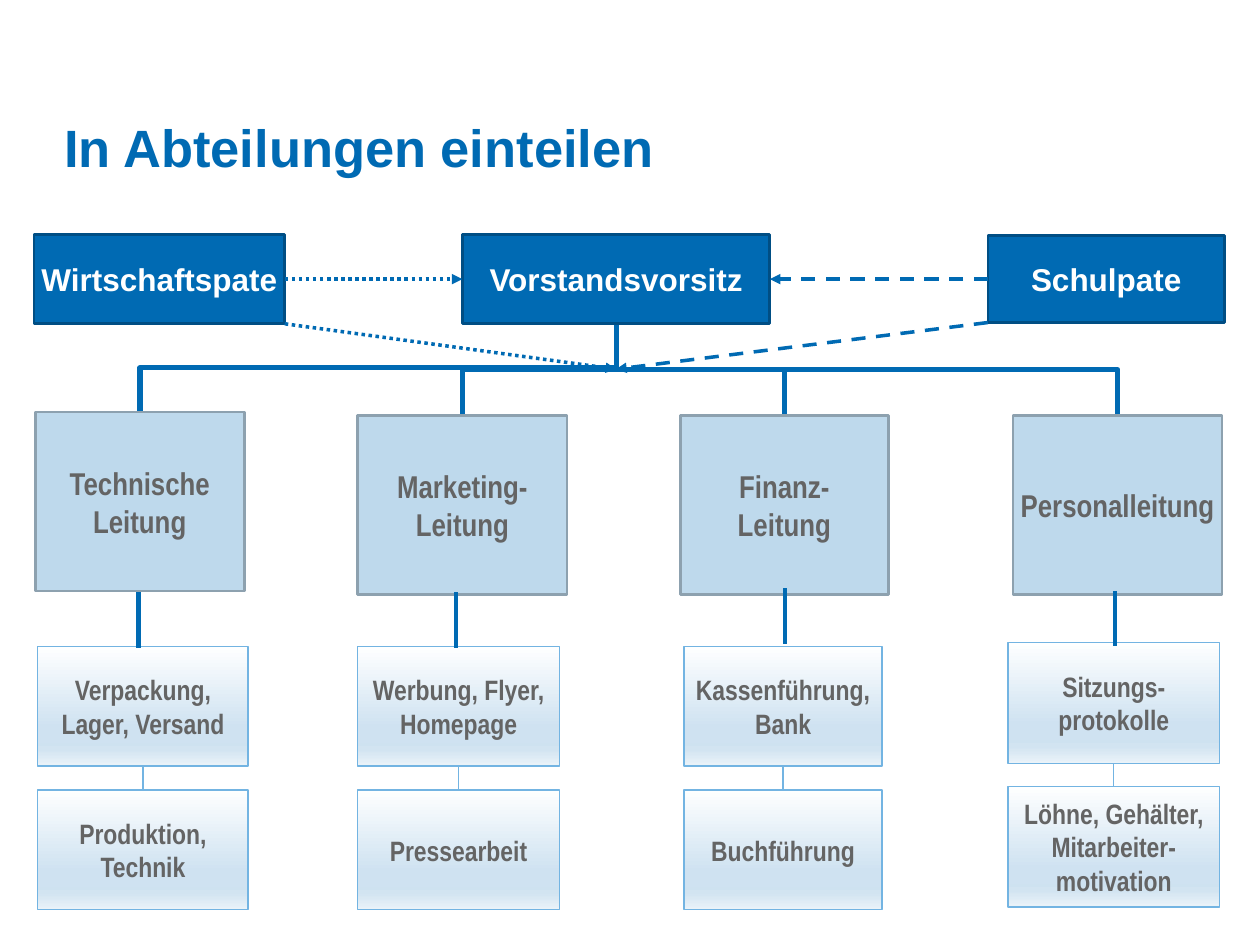
import pptx
import pptx.util
import pptx.dml.color
import pptx.enum.dml
import pptx.enum.shapes
import pptx.enum.text
import pptx.oxml.ns
import lxml.etree

Inches = pptx.util.Inches
Pt = pptx.util.Pt
qn = pptx.oxml.ns.qn
KIND = pptx.enum.shapes.MSO_CONNECTOR
DASH = pptx.enum.dml.MSO_LINE
BLUE, DARK, PALE, SKY, GREY = "006AB3", "004E84", "BED9EC", "73B4E2", "646464"
FADE = [(0, "FEFFFF"), (68, "CFE2F1"), (81, "CEE2F0"), (86, "D2E4F1"), (100, "EBF3F9")]

# Each column: lead box, lead text, link x and top, task boxes, task texts
COLUMNS = [
    ((0.28, 3.27, 1.66, 1.42), "Technische\nLeitung", (1.1, 4.7),
     (0.3, 5.13, 1.67, 0.95), ["Verpackung,\nLager, Versand", "Produktion,\nTechnik"]),
    ((2.84, 3.3, 1.66, 1.42), "Marketing-\nLeitung", (3.62, 4.7),
     (2.84, 5.13, 1.6, 0.95), ["Werbung, Flyer,\nHomepage", "Pressearbeit"]),
    ((5.4, 3.3, 1.65, 1.42), "Finanz-\nLeitung", (6.23, 4.67),
     (5.43, 5.13, 1.57, 0.95), ["Kassenführung,\nBank", "Buchführung"]),
    ((8.04, 3.3, 1.66, 1.42), "Personalleitung", (8.85, 4.69),
     (8, 5.1, 1.68, 0.96), ["Sitzungs-\nprotokolle", "Löhne, Gehälter,\nMitarbeiter-\nmotivation"]),
]
STEP = 1.14  # from one task box to the next


def paint(target, color):
    target.rgb = pptx.dml.color.RGBColor.from_string(color)


def write(shape, text, font, size, color, align):
    frame = shape.text_frame
    frame.text = text
    frame.margin_left = frame.margin_right = 0
    frame.margin_top = frame.margin_bottom = 0
    for para in frame.paragraphs:
        para.alignment = align
        for run in para.runs:
            run.font.name = font
            run.font.size = Pt(size)
            run.font.bold = True
            paint(run.font.color, color)
    return frame


def add_box(slide, box, text, fill, edge, width, font, size, color):
    shape = slide.shapes.add_shape(
        pptx.enum.shapes.MSO_SHAPE.RECTANGLE, *map(Inches, box))
    shape.shadow.inherit = False
    if isinstance(fill, list):
        fade(shape, fill)
    else:
        shape.fill.solid()
        paint(shape.fill.fore_color, fill)
    paint(shape.line.color, edge)
    shape.line.width = Pt(width)
    frame = write(shape, text, font, size, color, pptx.enum.text.PP_ALIGN.CENTER)
    frame.word_wrap = False
    frame.vertical_anchor = pptx.enum.text.MSO_ANCHOR.MIDDLE
    return shape


def fade(shape, stops):
    shape.fill.gradient()
    shape.fill.gradient_angle = 270
    group = shape._element.spPr.find(".//" + qn("a:gsLst"))
    for old in list(group):
        group.remove(old)
    for place, color in stops:
        stop = lxml.etree.SubElement(group, qn("a:gs"), pos=str(place * 1000))
        lxml.etree.SubElement(stop, qn("a:srgbClr"), val=color)


def add_line(slide, start, end, color, width, dash=None, arrow=False, kind=KIND.STRAIGHT):
    line = slide.shapes.add_connector(kind, *map(Inches, start + end))
    paint(line.line.color, color)
    line.line.width = Pt(width)
    if dash:
        line.line.dash_style = dash
    props = line._element.spPr
    if arrow:
        lxml.etree.SubElement(props.find(qn("a:ln")), qn("a:tailEnd"), type="triangle")
    lxml.etree.SubElement(props, qn("a:effectLst"))
    return line


def join(line, first, side, second, other):
    line.begin_connect(first, side)
    line.end_connect(second, other)


def add_elbow(slide, start, end):
    """Draw a vertical-first elbow: a level one turned about its centre."""
    (x1, y1), (x2, y2) = start, end
    mid_x, mid_y = (x1 + x2) / 2, (y1 + y2) / 2
    half_w, half_h = abs(y2 - y1) / 2, abs(x2 - x1) / 2
    side = 1 if x1 < x2 else -1
    line = add_line(slide, (mid_x + side * half_w, mid_y + half_h),
                    (mid_x - side * half_w, mid_y - half_h), BLUE, 3, kind=KIND.ELBOW)
    line._element.spPr.find(qn("a:xfrm")).set("rot", str(5400000 * (2 - side)))


def add_title(slide, box):
    title = slide.shapes.add_textbox(*map(Inches, box))
    frame = write(title, "In Abteilungen einteilen", "Arial", 30, BLUE,
                  pptx.enum.text.PP_ALIGN.LEFT)
    frame.word_wrap = True


def add_column(slide, lead, name, link, task, texts, hub):
    # Lead box with its elbow to the chair
    x, y, w, h = lead
    add_elbow(slide, (x + w / 2, y), hub)
    add_box(slide, lead, name, PALE, "8DA1AF", 1.5, "Arial Narrow", 18, GREY)

    # Task boxes, linked one below the other
    x, y, w, h = task
    boxes = [add_box(slide, (x, y + i * STEP, w, h), text, FADE, SKY, 0.75,
                     "Arial Narrow", 16, GREY) for i, text in enumerate(texts)]
    for upper, lower in zip(boxes, boxes[1:]):
        join(add_line(slide, (x, y), (x, y), SKY, 0.75), upper, 2, lower, 0)

    # Link from lead to tasks
    add_line(slide, link, (link[0], link[1] + 0.44), BLUE, 2.5)


def add_top(slide, chair, left, right, node):
    style = (BLUE, DARK, 1.5, "Arial", 18, "FFFFFF")
    head = add_box(slide, chair, "Vorstandsvorsitz", *style)
    school = add_box(slide, right, "Schulpate", *style)
    firm = add_box(slide, left, "Wirtschaftspate", *style)

    # Advice to the chair, then to the node below it
    sides = [(firm, 3, 1, (left[0] + left[2], left[1] + left[3]), DASH.ROUND_DOT),
             (school, 1, 3, (right[0], right[1] + right[3]), DASH.DASH)]
    for box, near, far, corner, dash in sides:
        join(add_line(slide, corner, node, BLUE, 2, dash, True), box, near, head, far)
        add_line(slide, corner, node, BLUE, 2, dash, True)


def main():
    deck = pptx.Presentation()
    deck.slide_width, deck.slide_height = Inches(10), Inches(7.5)
    slide = deck.slides.add_slide(deck.slide_layouts[6])
    add_title(slide, (0.51, 0.91, 9.06, 0.5))
    for column in COLUMNS:
        add_column(slide, *column, hub=(4.89, 2.57))
    add_top(slide, (3.67, 1.86, 2.44, 0.71), (0.27, 1.86, 1.99, 0.71),
            (7.84, 1.87, 1.88, 0.69), node=(4.89, 2.93))
    deck.save("out.pptx")


if __name__ == "__main__":
    main()
